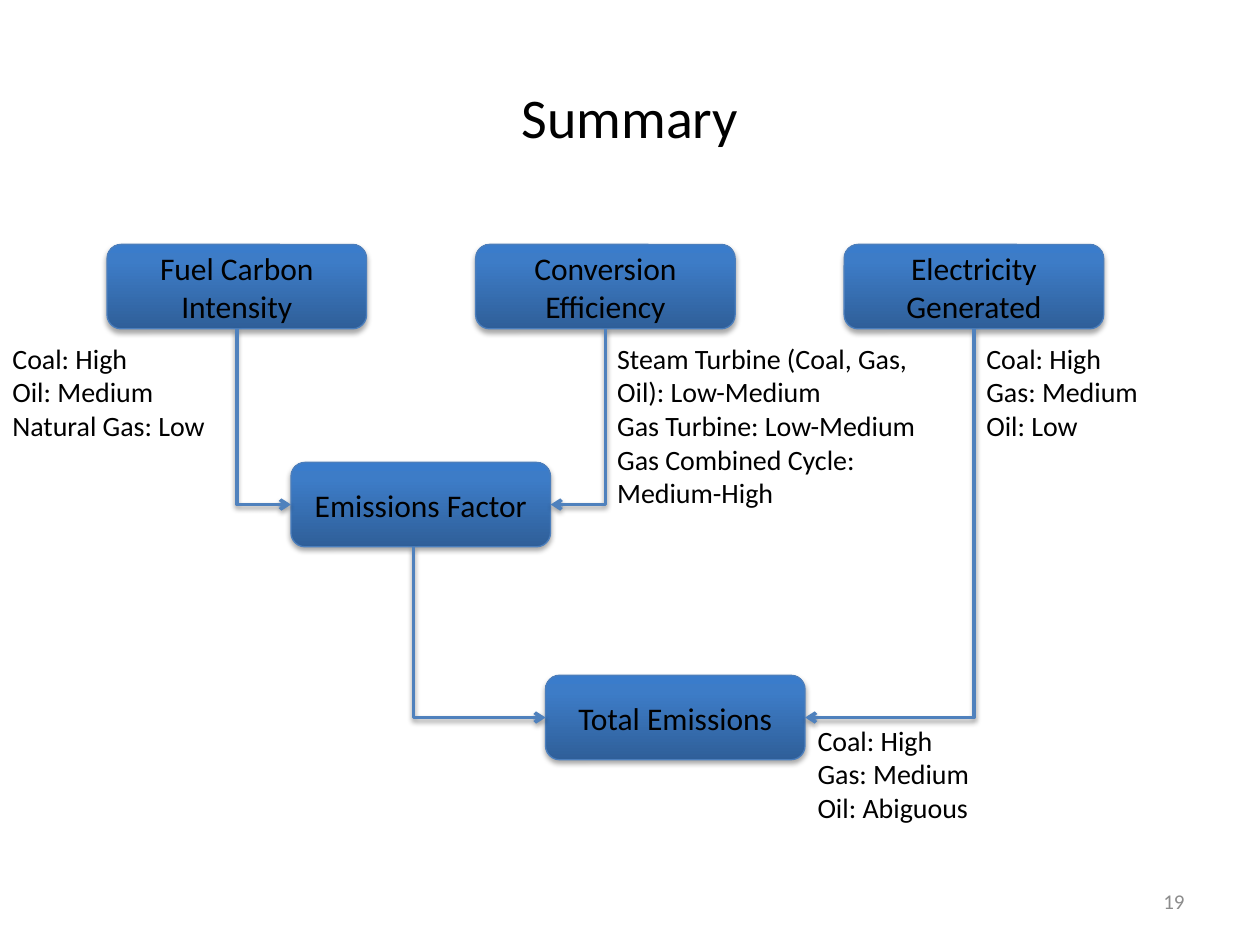
from copy import deepcopy

from pptx import Presentation
from pptx.dml.color import RGBColor
from pptx.enum.shapes import MSO_CONNECTOR as Connector, MSO_SHAPE as Shape
from pptx.enum.text import MSO_ANCHOR as Anchor, MSO_AUTO_SIZE as AutoSize, PP_ALIGN as Align
from pptx.oxml import parse_xml
from pptx.oxml.ns import nsdecls, qn
from pptx.util import Inches, Pt

FONT = "Calibri"
BLACK = RGBColor(0x00, 0x00, 0x00)
GRAY = RGBColor(0x8C, 0x8C, 0x8C)
BOX_LINE = RGBColor(0x4B, 0x7E, 0xBC)
ARROW_LINE = RGBColor(0x4F, 0x81, 0xBD)
BOX_STOPS = [
    (0, RGBColor(0x2F, 0x5F, 0x99)),
    (0.8, RGBColor(0x3D, 0x7C, 0xC7)),
    (1, RGBColor(0x3A, 0x7C, 0xCB)),
]

BOX_WIDTH, BOX_HEIGHT = Inches(2.06), Inches(0.67)
INPUT_LEFT, INPUT_TOP, INPUT_STEP = Inches(0.85), Inches(1.94), Inches(2.925)
NOTE_TOP = Inches(2.66)
LEFT_SITE, BOTTOM_SITE, RIGHT_SITE = 1, 2, 3


def format_paragraph(paragraph, size, color=BLACK, align=None):
    paragraph.font.name = FONT
    paragraph.font.size = Pt(size)
    paragraph.font.color.rgb = color
    paragraph.alignment = align


def add_shadow(shape, opacity, distance):
    shape._element.spPr.append(parse_xml(
        f'<a:effectLst {nsdecls("a")}>'
        f'<a:outerShdw blurRad="{Pt(3.1)}" dist="{Pt(distance)}" dir="5400000" rotWithShape="0">'
        f'<a:srgbClr val="{BLACK}"><a:alpha val="{opacity * 1000}"/></a:srgbClr>'
        '</a:outerShdw></a:effectLst>'))


def fill_gradient(shape):
    shape.fill.gradient()
    shape.fill.gradient_angle = 90
    stop_list = shape._element.spPr.find(".//" + qn("a:gsLst"))
    stop_list.append(deepcopy(stop_list[0]))
    for stop, (position, color) in zip(shape.fill.gradient_stops, BOX_STOPS):
        stop.position = position
        stop.color.rgb = color


def add_title(slide, text, left, top, width, height):
    title = slide.shapes.title
    title.left, title.top, title.width, title.height = left, top, width, height
    title.text_frame.text = text
    title.text_frame.vertical_anchor = Anchor.MIDDLE
    format_paragraph(title.text_frame.paragraphs[0], 32, align=Align.CENTER)


def add_page_number(slide, text, left, top, width, height):
    frame = slide.shapes.add_textbox(left, top, width, height).text_frame
    frame.word_wrap = True
    frame.vertical_anchor = Anchor.MIDDLE
    frame.text = text
    format_paragraph(frame.paragraphs[0], 12, GRAY, Align.RIGHT)


def add_box(slide, text, left, top):
    box = slide.shapes.add_shape(Shape.ROUNDED_RECTANGLE, left, top, BOX_WIDTH, BOX_HEIGHT)
    fill_gradient(box)
    box.line.color.rgb = BOX_LINE
    box.line.width = Pt(0.75)
    add_shadow(box, 35, 1.8)
    frame = box.text_frame
    frame.word_wrap = True
    frame.vertical_anchor = Anchor.MIDDLE
    frame.text = text
    format_paragraph(frame.paragraphs[0], 18, align=Align.CENTER)
    return box


def add_note(slide, lines, left, top, width, height, wrap=False):
    frame = slide.shapes.add_textbox(left, top, width, height).text_frame
    frame.word_wrap = wrap
    frame.auto_size = AutoSize.SHAPE_TO_FIT_TEXT
    frame.text = "\n".join(lines)
    for paragraph in frame.paragraphs:
        format_paragraph(paragraph, 16)


def add_elbow_arrow(slide, source, target, offset=0):
    start_x = source.left + source.width // 2 + offset
    start_y = source.top + source.height
    goes_right = start_x < target.left
    end_x = target.left if goes_right else target.left + target.width
    end_y = target.top + target.height // 2
    arrow = slide.shapes.add_connector(Connector.ELBOW, start_x, start_y, end_x, end_y)
    if not offset:
        arrow.begin_connect(source, BOTTOM_SITE)
    arrow.end_connect(target, LEFT_SITE if goes_right else RIGHT_SITE)

    across, down = abs(end_x - start_x), end_y - start_y
    arrow.left = (start_x + end_x - down) // 2
    arrow.top = (start_y + end_y - across) // 2
    arrow.width, arrow.height = down, across
    properties = arrow._element.spPr
    properties.find(qn("a:prstGeom")).set("prst", "bentConnector2")
    transform = properties.find(qn("a:xfrm"))
    transform.set("rot", "16200000" if goes_right else "5400000")
    transform.set("flipH", "1" if goes_right else "0")

    arrow.line.color.rgb = ARROW_LINE
    arrow.line.width = Pt(2)
    properties.find(qn("a:ln")).append(parse_xml(f'<a:tailEnd {nsdecls("a")} type="arrow"/>'))
    add_shadow(arrow, 38, 1.6)


def add_diagram(slide):
    names = ["Fuel Carbon Intensity", "Conversion Efficiency", "Electricity Generated"]
    fuel, conversion, electricity = [
        add_box(slide, name, INPUT_LEFT + column * INPUT_STEP, INPUT_TOP)
        for column, name in enumerate(names)
    ]
    factor = add_box(slide, "Emissions Factor", Inches(2.31), Inches(3.67))
    total = add_box(slide, "Total Emissions", Inches(4.33), Inches(5.36))

    add_elbow_arrow(slide, fuel, factor)
    add_elbow_arrow(slide, conversion, factor)
    add_elbow_arrow(slide, factor, total, offset=-Inches(0.06))
    add_elbow_arrow(slide, electricity, total)


def add_notes_beside_boxes(slide):
    add_note(slide, ["Coal: High", "Oil: Medium", "Natural Gas: Low"],
             0, NOTE_TOP, Inches(2.08), Inches(0.91), wrap=True)
    add_note(slide, ["Steam Turbine (Coal, Gas, Oil): Low-Medium",
                     "Gas Turbine: Low-Medium",
                     "Gas Combined Cycle: Medium-High"],
             Inches(4.8), NOTE_TOP, Inches(2.92), Inches(1.45), wrap=True)
    add_note(slide, ["Coal: High", "Gas: Medium", "Oil: Low"],
             Inches(7.73), NOTE_TOP, Inches(1.42), Inches(0.91))
    add_note(slide, ["Coal: High", "Gas: Medium", "Oil: Abiguous"],
             Inches(6.39), Inches(5.69), Inches(1.42), Inches(0.91))


def main():
    presentation = Presentation()
    presentation.slide_width, presentation.slide_height = Inches(10), Inches(7.5)
    slide = presentation.slides.add_slide(presentation.slide_layouts.get_by_name("Title Only"))
    add_title(slide, "Summary", Inches(0.5), Inches(0.3), Inches(9), Inches(1.25))
    add_page_number(slide, "19", Inches(7.17), Inches(6.95), Inches(2.33), Inches(0.4))
    add_diagram(slide)
    add_notes_beside_boxes(slide)
    presentation.save("out.pptx")


if __name__ == "__main__":
    main()
